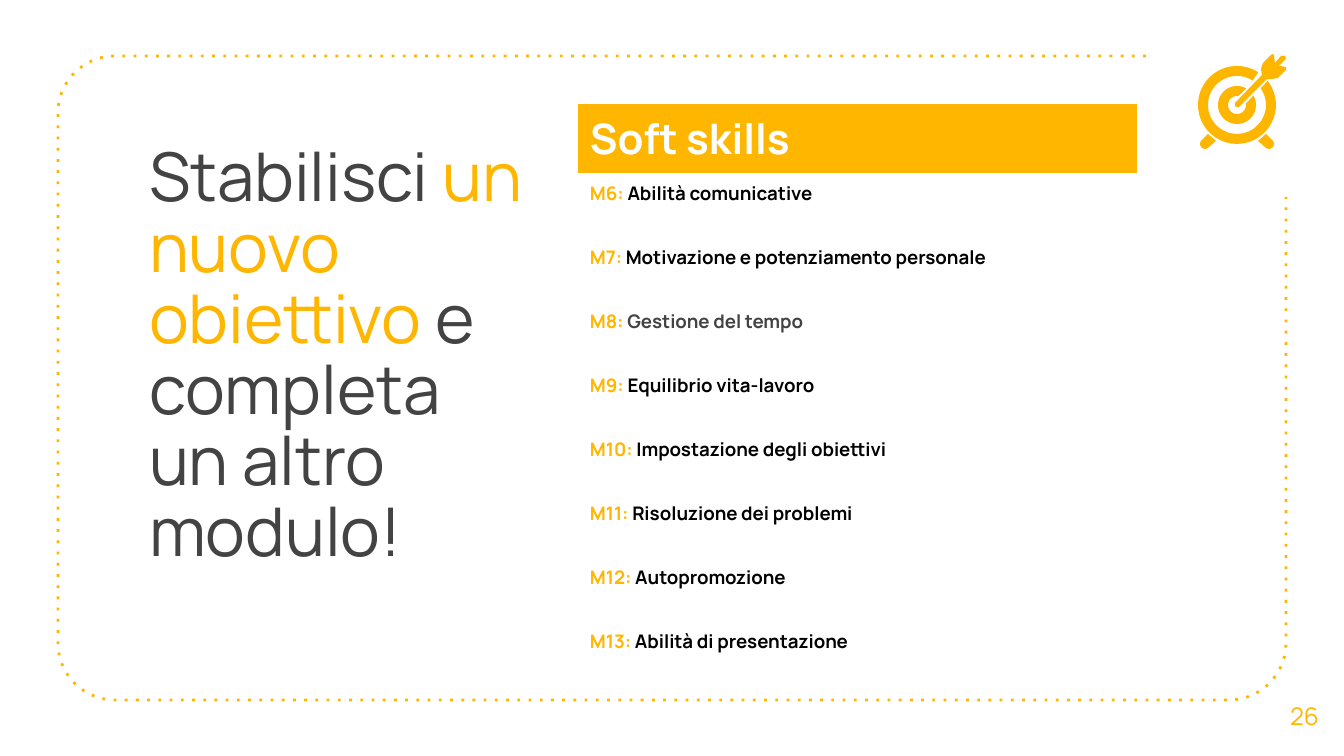
from math import cos, radians, sin

from pptx import Presentation
from pptx.dml.color import RGBColor
from pptx.enum.dml import MSO_LINE
from pptx.enum.text import MSO_ANCHOR as Anchor, PP_ALIGN as Align
from pptx.oxml.ns import qn
from pptx.util import Pt

PX = 914400 / 134.4
AMBER, GREY, BLACK, WHITE = "FFB600", "434343", "000000", "FFFFFF"

MODULES = [
    "Abilità comunicative",
    "Motivazione e potenziamento personale",
    "Gestione del tempo",
    "Equilibrio vita-lavoro",
    "Impostazione degli obiettivi",
    "Risoluzione dei problemi",
    "Autopromozione",
    "Abilità di presentazione",
]
FIRST_MODULE = 6
CURRENT_MODULE = 8


def emu(px):
    return round(px * PX)


def color(hex_string):
    return RGBColor.from_string(hex_string)


def arc(x, y, radius, start, end, steps=40):
    """Points on a circle, in degrees; angles grow clockwise from the right."""
    angles = [radians(start + (end - start) * i / steps) for i in range(steps + 1)]
    return [(x + radius * cos(a), y + radius * sin(a)) for a in angles]


def add_run(paragraph, text, size, fill, bold=False, font="Manrope"):
    run = paragraph.add_run()
    run.text = text
    run.font.name = font
    run.font.size = Pt(size)
    run.font.bold = bold
    run.font.color.rgb = color(fill)


class SlideBuilder:
    def __init__(self, slide):
        self.slide = slide

    def outline(self, points, closed=True, shapes=None):
        """A filled shape when closed, a dotted line when open."""
        points = [(emu(x), emu(y)) for x, y in points]
        builder = (shapes or self.slide.shapes).build_freeform(*points[0], scale=1.0)
        builder.add_line_segments(points[1:], close=closed)
        shape = builder.convert_to_shape()
        shape.shadow.inherit = False
        if closed:
            shape.fill.solid()
            shape.fill.fore_color.rgb = color(AMBER)
            shape.line.fill.background()
        else:
            shape.fill.background()
            shape.line.color.rgb = color(AMBER)
            shape.line.width = Pt(1.5)
            shape.line.dash_style = MSO_LINE.ROUND_DOT
            next(shape.element.iter(qn("a:prstDash"))).set("val", "dot")

    def text(self, box, runs, size, align=Align.LEFT, anchor=Anchor.TOP, spacing=1.0):
        frame = self.slide.shapes.add_textbox(*map(emu, box)).text_frame
        frame.word_wrap = True
        frame.vertical_anchor = anchor
        frame.margin_left = frame.margin_right = emu(13)
        frame.margin_top = frame.margin_bottom = emu(13)
        paragraph = frame.paragraphs[0]
        paragraph.alignment = align
        paragraph.line_spacing = spacing
        for text, fill in runs:
            add_run(paragraph, text, size=size, fill=fill)

    def table(self, left, top, width, header, rows, header_height, row_height):
        height = header_height + row_height * len(rows)
        table = self.slide.shapes.add_table(
            len(rows) + 1, 1, *map(emu, (left, top, width, height))).table
        table.first_row = table.horz_banding = False
        for index, runs in enumerate([header] + rows):
            is_header = index == 0
            table.rows[index].height = emu(header_height if is_header else row_height)
            cell = table.cell(index, 0)
            cell.margin_left = cell.margin_right = emu(13)
            if is_header:
                cell.fill.solid()
                cell.fill.fore_color.rgb = color(AMBER)
            else:
                cell.fill.background()
            for text, fill in runs:
                add_run(cell.text_frame.paragraphs[0], text,
                        size=22.5 if is_header else 10, fill=fill, bold=True)

    def frame(self, left, top, right, bottom, radius):
        """Rounded border left open at the top right corner."""
        self.outline(
            [(1146, top)]
            + arc(left + radius, top + radius, radius, 270, 180)
            + arc(left + radius, bottom - radius, radius, 180, 90)
            + arc(right - radius, bottom - radius, radius, 90, 0)
            + [(right, 197)], closed=False)

    def target(self, x, y):
        shapes = self.slide.shapes.add_group_shape().shapes
        # outer radius and its gap, then inner radius and its gap
        for outer, outer_gap, inner, inner_gap in [
            (39, (-38, -57), 29, (-35, -57)),
            (19, (-30, -61), 9, (-9, -81)),
        ]:
            self.outline(
                arc(x, y, outer, outer_gap[0], outer_gap[1] + 360)
                + arc(x, y, inner, inner_gap[1] + 360, inner_gap[0]), shapes=shapes)
        foot = [(-29, 29)] + arc(-32, 39, 5, 225, 45, steps=10) + [(-21, 36)]
        for side in (1, -1):
            self.outline([(x + side * dx, y + dy) for dx, dy in foot], shapes=shapes)
        arrow = [
            (36, -51), (34, -50), (26, -42), (24, -36), (25, -30), (-2, -2),
            (-2, 1), (0, 2), (2, 2), (30, -26), (36, -26), (41, -27), (49, -35),
            (49, -38), (42, -39), (48, -45), (49, -47), (48, -49), (44, -49),
            (38, -42), (37, -50),
        ]
        self.outline([(x + dx, y + dy) for dx, dy in arrow], shapes=shapes)


def main():
    presentation = Presentation()
    presentation.slide_width = emu(1344)
    presentation.slide_height = emu(756)
    builder = SlideBuilder(presentation.slides.add_slide(presentation.slide_layouts[6]))

    builder.frame(left=58, top=56, right=1286, bottom=700, radius=57)
    builder.text((136, 132, 399, 126), [
        ("Stabilisci ", GREY),
        ("un nuovo obiettivo", AMBER),
        (" e completa un altro modulo!", GREY),
    ], size=36, spacing=0.88)
    builder.text((1265, 675, 79, 81), [("26", AMBER)], size=13,
                 align=Align.CENTER, anchor=Anchor.MIDDLE)
    builder.target(1237, 105)
    rows = [
        [(f"M{number}: ", AMBER), (name, GREY if number == CURRENT_MODULE else BLACK)]
        for number, name in enumerate(MODULES, FIRST_MODULE)
    ]
    builder.table(577, 103, 561, [("Soft skills", WHITE)], rows,
                  header_height=71, row_height=64)
    presentation.save("out.pptx")


if __name__ == "__main__":
    main()
